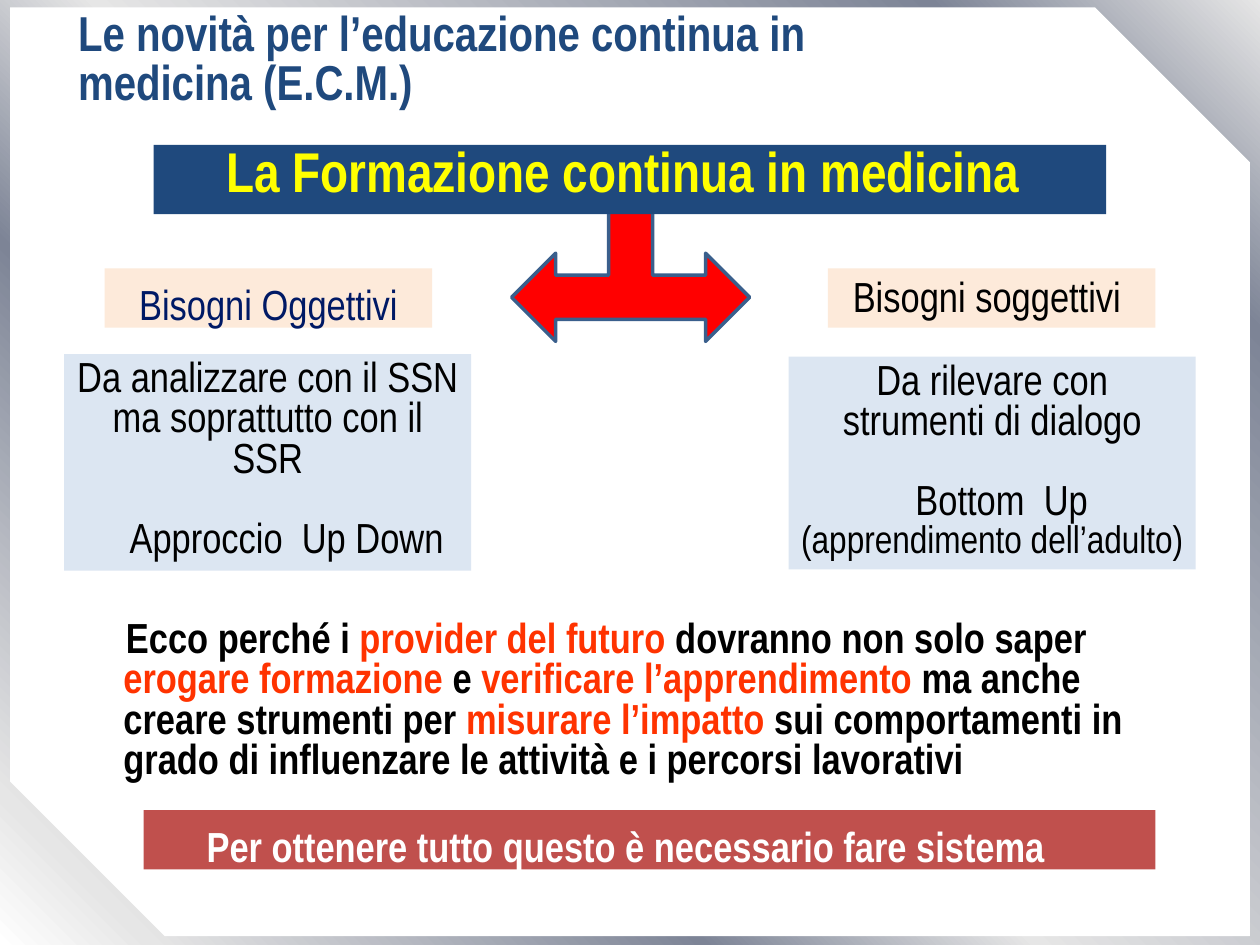
import dataclasses

import lxml.etree
import pptx
import pptx.dml.color
import pptx.enum.shapes
import pptx.enum.text
import pptx.oxml.ns
import pptx.util

SHAPES = pptx.enum.shapes.MSO_SHAPE
ALIGN = pptx.enum.text.PP_ALIGN
ANCHOR = pptx.enum.text.MSO_ANCHOR

SLIDE_WIDTH = pptx.util.Inches(10)
SLIDE_HEIGHT = pptx.util.Inches(7.5)
COLUMNS, ROWS = 100, 75


@dataclasses.dataclass(frozen=True)
class Theme:
    font: str = "Arial Narrow"
    navy: str = "1F497D"
    deep_blue: str = "001965"
    arrow_fill: str = "FF0000"
    arrow_line: str = "3A5F8C"
    peach: str = "FDEADA"
    pale_blue: str = "DCE6F2"
    brick: str = "C0504D"
    accent: str = "FF3300"
    yellow: str = "FFFF00"
    black: str = "000000"
    white: str = "FFFFFF"
    backdrop: tuple = ((0, "FFFFFF"), (7, "E6E6E6"), (32, "7D8496"),
                       (47, "E6E6E6"), (85, "7D8496"), (100, "E6E6E6"))
    band_size: int = 32
    title_size: int = 28
    body_size: int = 24
    note_size: int = 22


THEME = Theme()


def across(columns):
    return round(SLIDE_WIDTH * columns / COLUMNS)


def down(rows):
    return round(SLIDE_HEIGHT * rows / ROWS)


def place(left, top, width, height):
    return across(left), down(top), across(width), down(height)


def mirrored(left, width):
    """Left column of the counterpart on the other side of the slide's centre."""
    return COLUMNS - left - width


def rgb(code):
    return pptx.dml.color.RGBColor.from_string(code)


def paint_backdrop(page):
    fill = page.background.fill
    fill.gradient()
    fill.gradient_angle = 45
    qn = pptx.oxml.ns.qn
    stops = next(page.element.iter(qn("a:gsLst")))
    for stop in list(stops):
        stops.remove(stop)
    for share, code in THEME.backdrop:
        stop = lxml.etree.SubElement(stops, qn("a:gs"), pos=str(share * 1000))
        lxml.etree.SubElement(stop, qn("a:srgbClr"), val=code)


def add_block(page, grid, fill, kind=SHAPES.RECTANGLE, line=None):
    box = page.shapes.add_shape(kind, *place(*grid))
    box.shadow.inherit = False
    box.fill.solid()
    box.fill.fore_color.rgb = rgb(fill)
    if line:
        box.line.color.rgb = rgb(line)
        box.line.width = pptx.util.Pt(2)
    else:
        box.line.fill.background()
    return box


def prepare_text(box, anchor=ANCHOR.TOP, left=1, top=0.5):
    frame = box.text_frame
    frame.word_wrap = True
    frame.vertical_anchor = anchor
    frame.margin_left = across(left)
    frame.margin_top = down(top)
    return frame


def write(para, spans, size, bold=False, align=ALIGN.CENTER, spacing=None):
    """Fill a paragraph with (text, colour) spans."""
    para.alignment = align
    if spacing:
        para.line_spacing = spacing
    for text, colour in spans:
        span = para.add_run()
        span.text = text
        span.font.name = THEME.font
        span.font.size = pptx.util.Pt(size)
        span.font.bold = bold
        span.font.color.rgb = rgb(colour)


def add_title(page):
    box = page.shapes.add_textbox(*place(3.5, 1.3, 63, 7.1))
    frame = prepare_text(box, ANCHOR.MIDDLE, left=2.7)
    write(frame.paragraphs[0],
          [("Le novità per l’educazione continua in medicina (E.C.M.)", THEME.navy)],
          THEME.title_size, True, ALIGN.LEFT, pptx.util.Pt(28))


def add_band(page):
    box = add_block(page, (12.2, 11.5, 75.6, 5.5), THEME.navy)
    frame = prepare_text(box, ANCHOR.MIDDLE)
    write(frame.paragraphs[0], [("La Formazione continua in medicina ", THEME.yellow)],
          THEME.band_size, True, spacing=pptx.util.Pt(28))


def add_heading(page, left, text, colour, spacing=None):
    box = add_block(page, (left, 21.3, 26, 4.7), THEME.peach)
    frame = prepare_text(box, top=0.8)
    write(frame.paragraphs[0], [(text, colour)], THEME.body_size, spacing=spacing)


def add_needs(page, left, top, height, intro, approach, shift, note=None):
    """Panel with an intro, a set-off approach moved by shift, and a smaller note."""
    frame = prepare_text(add_block(page, (left, top, 32.3, height), THEME.pale_blue))
    write(frame.paragraphs[0], [(intro, THEME.black)], THEME.body_size, spacing=0.8)
    para = frame.add_paragraph()
    para.space_before = pptx.util.Pt(23)
    para.get_or_add_pPr() if hasattr(para, "get_or_add_pPr") else None
    write(para, [(approach, THEME.black)], THEME.body_size, spacing=0.8)
    next(para.runs[0].font.fill and iter([para])).level = 0
    properties = frame.paragraphs[1].runs[0]._r.getparent().get_or_add_pPr()
    properties.set("marL", str(across(shift)))
    properties.set("indent", "0")
    if note:
        write(frame.add_paragraph(), [(note, THEME.black)], THEME.note_size, spacing=0.8)


def add_conclusion(page):
    frame = prepare_text(add_block(page, (5, 48.5, 90, 13.4), THEME.white),
                         left=4.8, top=0.8)
    para = frame.paragraphs[0]
    write(para, [
        ("Ecco perché i ", THEME.black),
        ("provider del futuro", THEME.accent),
        (" dovranno non solo saper ", THEME.black),
        ("erogare formazione", THEME.accent),
        (" e ", THEME.black),
        ("verificare l’apprendimento", THEME.accent),
        (" ma anche creare strumenti per ", THEME.black),
        ("misurare l’impatto", THEME.accent),
        (" sui comportamenti in grado di influenzare le attività"
         " e i percorsi lavorativi", THEME.black),
    ], THEME.body_size, True, ALIGN.LEFT, 0.8)
    para._p.get_or_add_pPr().set("indent", str(across(0.2)))


def add_closing(page):
    frame = prepare_text(add_block(page, (11.4, 64.3, 80.3, 4.7), THEME.brick),
                         left=5, top=0.8)
    write(frame.paragraphs[0],
          [("Per ottenere tutto questo è necessario fare sistema", THEME.white)],
          THEME.body_size, True, ALIGN.LEFT)


def main():
    deck = pptx.Presentation()
    deck.slide_width, deck.slide_height = SLIDE_WIDTH, SLIDE_HEIGHT
    page = deck.slides.add_slide(deck.slide_layouts[6])
    paint_backdrop(page)
    add_block(page, (0.8, 0.6, 98.4, 73.7), THEME.white, SHAPES.SNIP_2_DIAG_RECTANGLE)
    add_block(page, (40.6, 13.1, 18.9, 14), THEME.arrow_fill,
              SHAPES.LEFT_RIGHT_UP_ARROW, THEME.arrow_line)
    add_title(page)
    add_heading(page, 8.3, "Bisogni Oggettivi", THEME.deep_blue)
    add_needs(page, 5.1, 28.1, 17.2,
              "Da analizzare con il SSN ma soprattutto con il SSR",
              "Approccio  Up Down", 3)
    add_needs(page, mirrored(5.1, 32.3), 28.3, 16.9,
              "Da rilevare con strumenti di dialogo",
              "Bottom  Up", 1.5, "(apprendimento dell’adulto)")
    add_band(page)
    add_heading(page, mirrored(8.3, 26), "Bisogni soggettivi ", THEME.black, 0.85)
    add_conclusion(page)
    add_closing(page)
    deck.save("out.pptx")


if __name__ == "__main__":
    main()
